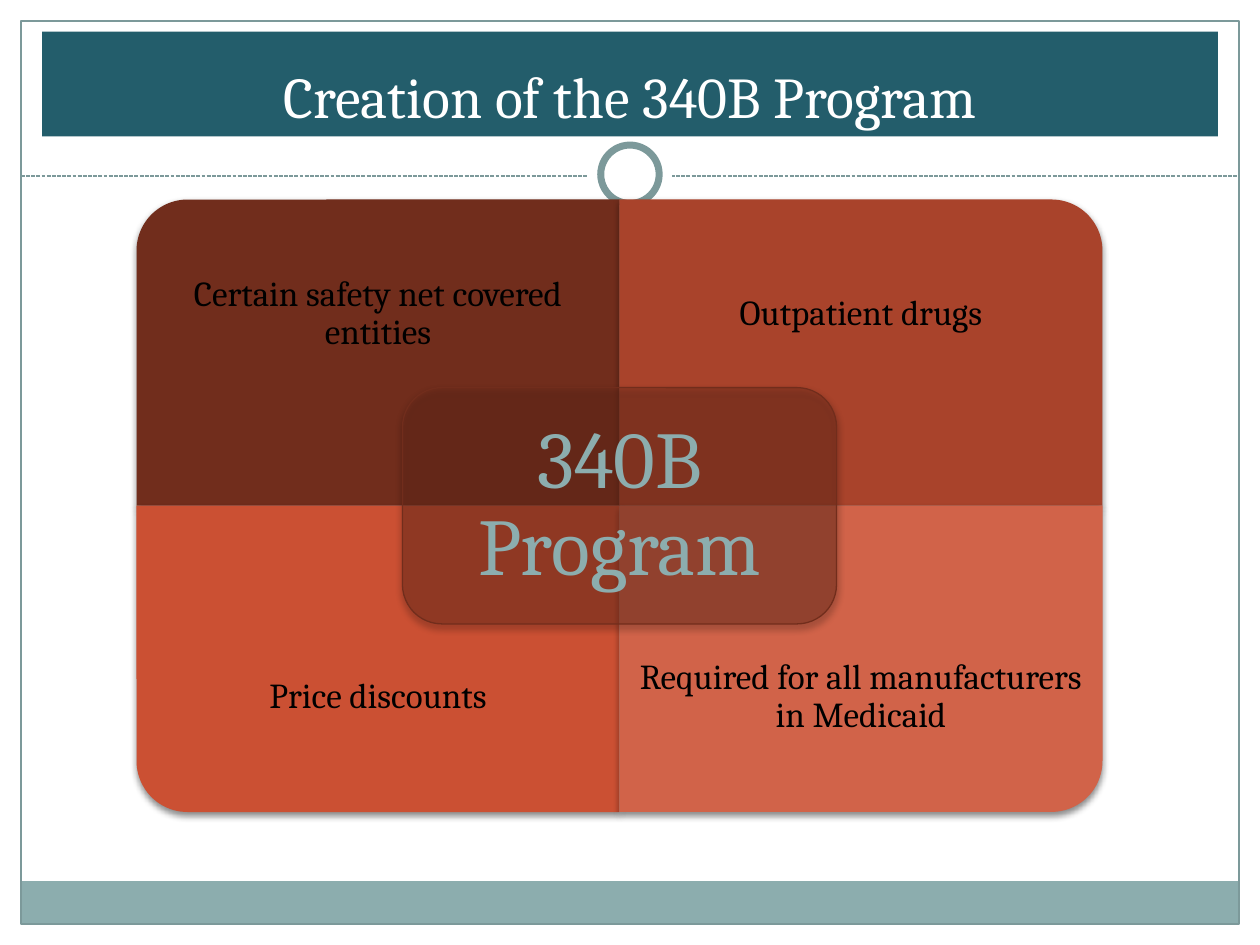
from dataclasses import dataclass

from lxml import etree
from pptx import Presentation
from pptx.dml.color import RGBColor
from pptx.enum.dml import MSO_LINE
from pptx.enum.shapes import MSO_CONNECTOR, MSO_SHAPE
from pptx.enum.text import MSO_ANCHOR, PP_ALIGN
from pptx.oxml.ns import qn
from pptx.util import Pt

RECT, OVAL = MSO_SHAPE.RECTANGLE, MSO_SHAPE.OVAL
ROUND, CORNER = MSO_SHAPE.ROUNDED_RECTANGLE, MSO_SHAPE.ROUND_1_RECTANGLE
STRAIGHT, DASH = MSO_CONNECTOR.STRAIGHT, MSO_LINE.SQUARE_DOT
MIDDLE, BOTTOM, CENTER = MSO_ANCHOR.MIDDLE, MSO_ANCHOR.BOTTOM, PP_ALIGN.CENTER


@dataclass(frozen=True)
class Theme:
    font: str = "Cambria"
    white: str = "FFFFFF"
    black: str = "000000"
    band: str = "235D6B"
    sage: str = "8CADAE"
    edge: str = "7C999A"
    dark: str = "712D1C"
    rust: str = "A9432B"
    brick: str = "CB5033"
    coral: str = "D16349"
    title: int = 33
    body: int = 20
    hub: int = 46


THEME = Theme()

# Matrix: centre point, tile size, height of a tile's text
MID_X, MID_Y = 354, 289
TILE_W, TILE_H = 276, 175
TEXT_H = 131

# Column, row, turn, colour, wording
TILES = [
    (0, 0, 270, THEME.dark, "Certain safety net covered entities"),
    (1, 0, 0, THEME.rust, "Outpatient drugs"),
    (0, 1, 180, THEME.brick, "Price discounts"),
    (1, 1, 90, THEME.coral, "Required for all manufacturers in Medicaid"),
]


def rgb(code):
    return RGBColor.from_string(code)


def apply(target, values):
    for name, value in values.items():
        setattr(target, name, value)


def around(x, y, w, h):
    """Box of the given size centred on a point."""
    return x - w / 2, y - h / 2, w, h


def add_form(slide, kind, box, fill=None, line=None, width=0.75):
    form = slide.shapes.add_shape(kind, *map(Pt, box))
    form.shadow.inherit = False
    if fill:
        form.fill.solid()
        form.fill.fore_color.rgb = rgb(fill)
    else:
        form.fill.background()
    if line:
        form.line.color.rgb = rgb(line)
        form.line.width = Pt(width)
    else:
        form.line.fill.background()
    return form


def add_shade(form):
    """Soft shadow straight below the shape."""
    effects = form._element.spPr.find(qn("a:effectLst"))
    shade = etree.SubElement(
        effects, qn("a:outerShdw"), blurRad=str(Pt(4)), dist=str(Pt(2)),
        dir="5400000", algn="ctr", rotWithShape="0")
    color = etree.SubElement(shade, qn("a:srgbClr"), val=THEME.black)
    etree.SubElement(color, qn("a:alpha"), val="45000")


def set_alpha(form, share):
    color = form._element.spPr.find(qn("a:solidFill"))[0]
    etree.SubElement(color, qn("a:alpha"), val=str(share * 1000))


def write(form, text, size, color, anchor=MIDDLE, inset=None, space=1.0):
    frame = form.text_frame
    apply(frame, {"word_wrap": True, "vertical_anchor": anchor})
    if inset is not None:
        sides = ("left", "top", "right", "bottom")
        apply(frame, {f"margin_{side}": Pt(inset) for side in sides})
    para = frame.paragraphs[0]
    apply(para, {"alignment": CENTER, "line_spacing": space})
    run = para.add_run()
    run.text = text
    apply(run.font, {"name": THEME.font, "size": Pt(size)})
    run.font.color.rgb = rgb(color)


def add_label(slide, box, text, size, color, inset):
    label = slide.shapes.add_textbox(*map(Pt, box))
    write(label, text, size, color, inset=inset, space=0.9)


def add_rule(slide, left, right, y):
    rule = slide.shapes.add_connector(STRAIGHT, Pt(left), Pt(y), Pt(right), Pt(y))
    rule.line.color.rgb = rgb(THEME.edge)
    apply(rule.line, {"width": Pt(0.75), "dash_style": DASH})
    etree.SubElement(rule._element.spPr, qn("a:effectLst"))


def add_tile(slide, col, row, turn, color, text):
    left = MID_X + (col - 1) * TILE_W
    top = MID_Y + (row - 1) * TILE_H
    # A quarter turn swaps width and height
    size = (TILE_H, TILE_W) if turn % 180 else (TILE_W, TILE_H)
    box = around(left + TILE_W / 2, top + TILE_H / 2, *size)
    tile = add_form(slide, CORNER, box, color)
    tile.rotation = turn
    add_shade(tile)
    # Text keeps to the outer part of the tile
    text_top = top + row * (TILE_H - TEXT_H)
    add_label(slide, (left, text_top, TILE_W, TEXT_H), text,
              THEME.body, THEME.black, 11.4)


def add_hub(slide):
    hub = add_form(slide, ROUND, around(MID_X, MID_Y, 248, 135),
                   THEME.dark, THEME.dark)
    set_alpha(hub, 41)
    add_shade(hub)
    add_label(slide, around(MID_X, MID_Y, 235, 122), "340B Program",
              THEME.hub, THEME.sage, 13.8)


def add_frame(slide):
    add_form(slide, RECT, (11.7, 503.5, 695.7, 24.3), THEME.sage)
    add_form(slide, RECT, (12, 12, 696, 516), line=THEME.edge)
    add_rule(slide, 12, 708, 100.6)
    add_form(slide, OVAL, around(360, 99.6, 48, 48), THEME.white)
    add_form(slide, OVAL, around(360, 99.6, 33.4, 33.4),
             THEME.white, THEME.edge, 4)


def main():
    deck = Presentation()
    apply(deck, {"slide_width": Pt(720), "slide_height": Pt(540)})
    slide = deck.slides.add_slide(deck.slide_layouts[6])

    # Border, footer band, divider and ring
    add_frame(slide)

    # Title band
    band = add_form(slide, RECT, (24, 18, 672, 60), THEME.band)
    write(band, "Creation of the 340B Program", THEME.title, THEME.white, BOTTOM)

    # Four tiles and the hub over them
    for tile in TILES:
        add_tile(slide, *tile)
    add_hub(slide)

    deck.save("out.pptx")


if __name__ == "__main__":
    main()
